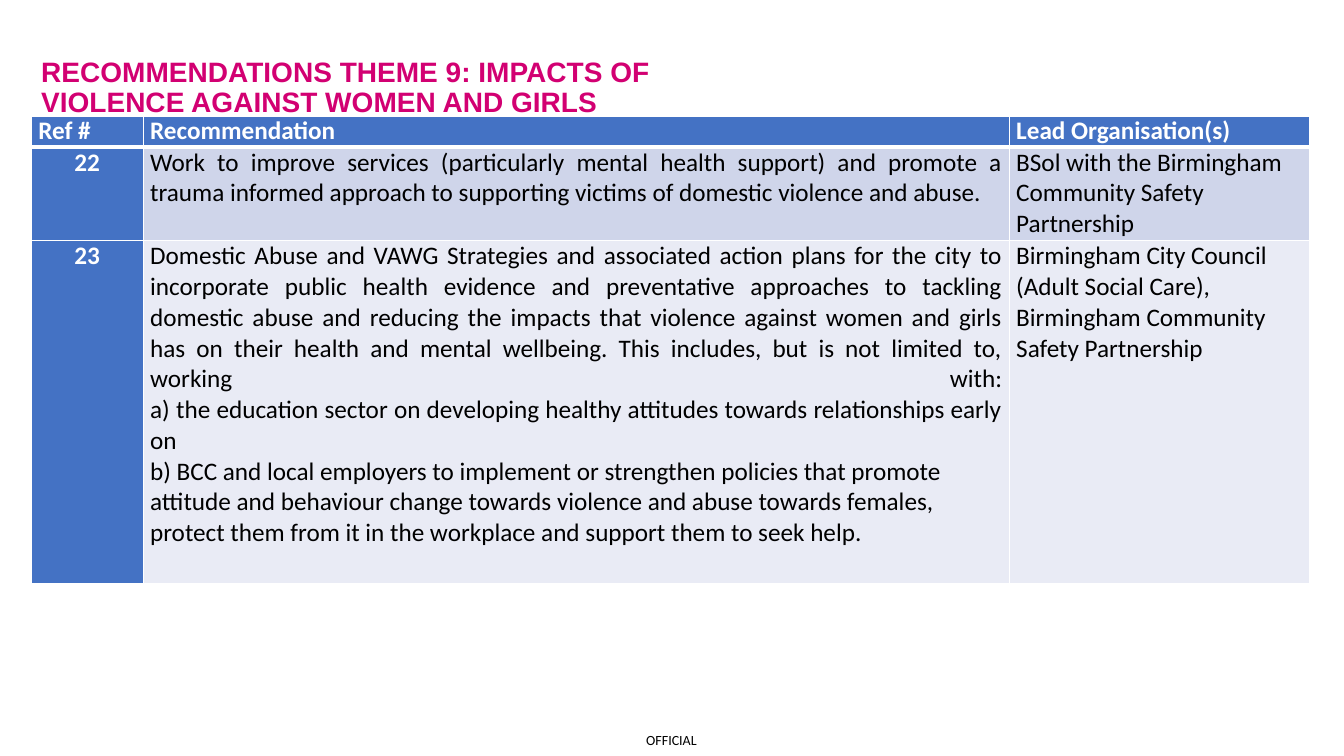
from pptx import Presentation
from pptx.dml.color import RGBColor
from pptx.enum.text import MSO_ANCHOR, PP_ALIGN as Align
from pptx.oxml import parse_xml
from pptx.oxml.ns import nsdecls
from pptx.util import Pt

PX = 9144
WHITE = RGBColor(0xFF, 0xFF, 0xFF)
BLACK = RGBColor(0, 0, 0)
PINK = RGBColor(0xD2, 0x00, 0x72)
BLUE = RGBColor(0x44, 0x72, 0xC4)
BANDS = RGBColor(0xCF, 0xD5, 0xEA), RGBColor(0xE9, 0xEB, 0xF5)

HEADER = ["Ref #", "Recommendation", "Lead Organisation(s)"]
RECOMMENDATIONS = [
    ["22",
     ["Work to improve services (particularly mental health support) and promote a trauma "
      "informed approach to supporting victims of domestic violence and abuse."],
     "BSol with the Birmingham Community Safety Partnership"],
    ["23",
     ["Domestic Abuse and VAWG Strategies and associated action plans for the city to "
      "incorporate public health evidence and preventative approaches to tackling domestic "
      "abuse and reducing the impacts that violence against women and girls has on their "
      "health and mental wellbeing. This includes, but is not limited to, working with:\n"
      "a) the education sector on developing healthy attitudes towards relationships early on",
      "b) BCC and local employers to implement or strengthen policies that promote attitude "
      "and behaviour change towards violence and abuse towards females, protect them from it "
      "in the workplace and support them to seek help."],
     "Birmingham City Council (Adult Social Care), Birmingham Community Safety Partnership"],
]


def write(tf, paragraphs, font="Calibri", size=18, color=BLACK, bold=False,
          aligns=(Align.LEFT,), spacing=None):
    """Fill a text frame; the first paragraphs take the given alignments."""
    for i, text in enumerate(paragraphs):
        p = tf.add_paragraph() if i else tf.paragraphs[0]
        p.alignment = aligns[i] if i < len(aligns) else Align.LEFT
        p.line_spacing = spacing
        for j, line in enumerate(text.split("\n")):
            if j:
                p.add_line_break()
            r = p.add_run()
            r.text = line
            r.font.name, r.font.size, r.font.bold = font, Pt(size), bold
            r.font.color.rgb = color


class Deck:
    """Builds the slide from px lengths."""

    def __init__(self, width, height):
        """Open a blank slide of the given size."""
        self.prs = Presentation()
        self.prs.slide_width, self.prs.slide_height = width * PX, height * PX
        self.s = self.prs.slides.add_slide(self.prs.slide_layouts[6])

    def text(self, box, text, inset=(0, 0), **fmt):
        """Add a text box with horizontal and vertical insets."""
        tf = self.s.shapes.add_textbox(*(v * PX for v in box)).text_frame
        tf.word_wrap = True
        tf.vertical_anchor = MSO_ANCHOR.TOP
        tf.margin_left = tf.margin_right = inset[0] * PX
        tf.margin_top = tf.margin_bottom = inset[1] * PX
        write(tf, [text], **fmt)

    def cell(self, cell, paragraphs, fill, borders, **fmt):
        """Style and fill one table cell; borders are points by side."""
        cell.margin_left = cell.margin_right = 7 * PX
        cell.margin_top = cell.margin_bottom = 0
        tcPr = cell._tc.get_or_add_tcPr()
        for side, width in borders.items():
            tcPr.append(parse_xml(
                f'<a:ln{side} {nsdecls("a")} w="{Pt(width)}"><a:solidFill>'
                f'<a:srgbClr val="{WHITE}"/></a:solidFill></a:ln{side}>'))
        cell.fill.solid()
        cell.fill.fore_color.rgb = fill
        write(cell.text_frame, paragraphs, **fmt)

    def table(self, x, y, cols, rows, header, body):
        """Add a table with a blue header row and a blue first column."""
        shape = self.s.shapes.add_table(len(rows), len(cols), x * PX, y * PX,
                                        sum(cols) * PX, sum(rows) * PX)
        table = shape.table
        table.first_col = True
        for col, width in zip(table.columns, cols):
            col.width = width * PX
        for row, height in zip(table.rows, rows):
            row.height = height * PX
        for c, text in enumerate(header):
            self.cell(table.cell(0, c), [text], BLUE, dict(L=1, R=1, T=1, B=3),
                      color=WHITE, bold=True)
        for i, (ref, advice, lead) in enumerate(body):
            borders = dict(L=1, R=1, T=1 if i else 3, B=1)
            band = BANDS[i % 2]
            self.cell(table.cell(i + 1, 0), [ref], BLUE, borders,
                      color=WHITE, bold=True, aligns=(Align.CENTER,))
            self.cell(table.cell(i + 1, 1), advice, band, borders,
                      aligns=(Align.JUSTIFY,))
            self.cell(table.cell(i + 1, 2), [lead], band, borders)


def main():
    """Build and save the slide."""
    deck = Deck(1333, 750)
    deck.text((641, 726, 53, 17), "OFFICIAL", size=10)
    deck.table(31, 115, [111, 859, 298], [31, 93, 340], HEADER, RECOMMENDATIONS)
    deck.text((31, 53, 754, 74),
              "RECOMMENDATIONS THEME 9: IMPACTS OF VIOLENCE AGAINST WOMEN AND GIRLS",
              inset=(10, 5), font="Arial", size=20, color=PINK, bold=True, spacing=0.9)
    deck.prs.save("out.pptx")


if __name__ == "__main__":
    main()
